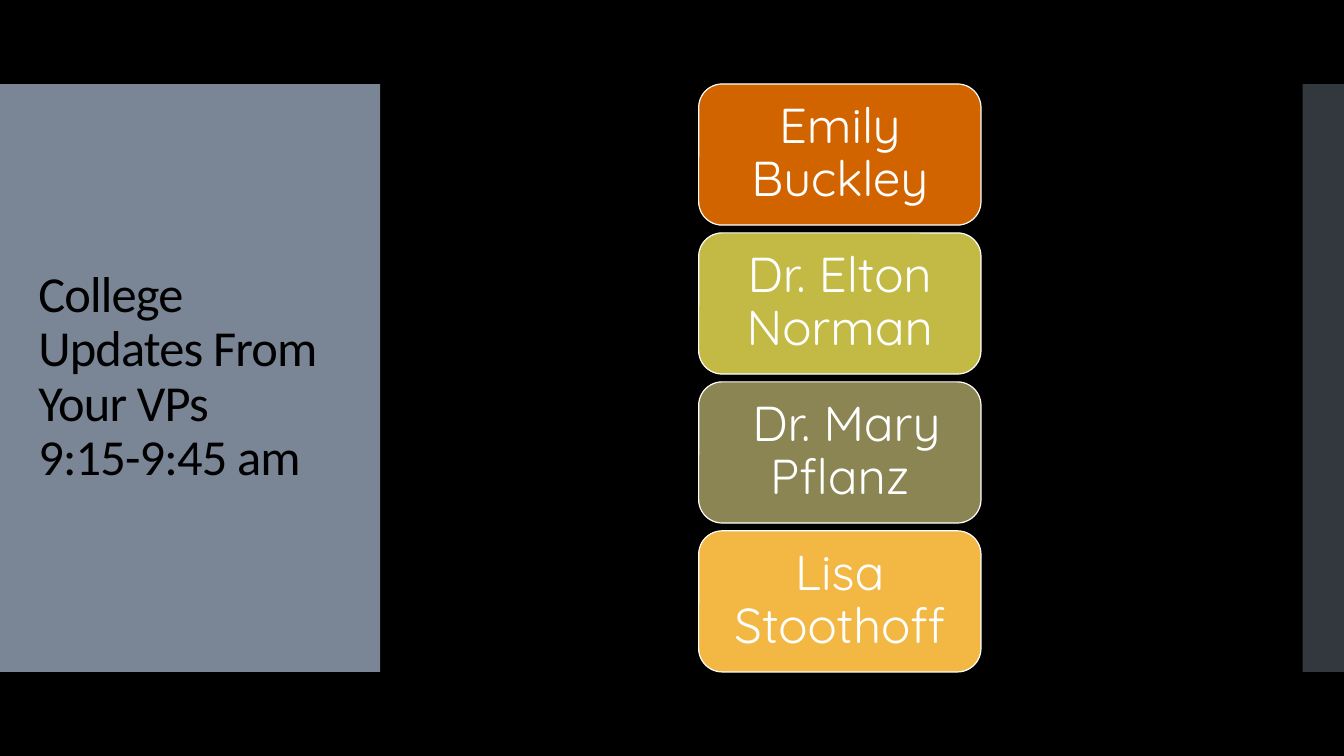
"""Builds a slide announcing the college updates from the vice presidents."""
from lxml import etree
from pptx import Presentation
from pptx import util as u
from pptx.dml.color import RGBColor
from pptx.enum import shapes, text
from pptx.oxml.ns import qn

COLORS = {"back": "000000", "panel": "818E9F", "ink": "000000", "white": "FFFFFF",
          "orange": "D26400", "lime": "C3BA45", "olive": "8A8552", "gold": "F3B843"}
TITLE = "College Updates From Your VPs\v9:15-9:45 am"
SPEAKERS = [("Emily Buckley", "orange"), ("Dr. Elton Norman", "lime"),
            (" Dr. Mary Pflanz", "olive"), ("Lisa Stoothoff", "gold")]

WIDTH, HEIGHT = 13.33, 7.5
BAND_TOP, BAND_HEIGHT = HEIGHT / 9, HEIGHT * 7 / 9
PANELS = [(0, 3.77, 95), (12.92, WIDTH - 12.92, 40)]
TITLE_AREA = (0.28, 1.23, 3.22, 5.03)
CARD_LEFT, CARD_WIDTH, CARD_HEIGHT = 6.93, 2.8, 1.4
CARD_STEP = (BAND_HEIGHT - CARD_HEIGHT) / (len(SPEAKERS) - 1)

TITLE_FORMAT = {"name": "Calibri", "size": u.Pt(36)}
CARD_FORMAT = {"name": "Quicksand", "size": u.Pt(35)}
TITLE_FRAME = {"vertical_anchor": text.MSO_ANCHOR.MIDDLE, "word_wrap": True,
               "auto_size": text.MSO_AUTO_SIZE.NONE}
CARD_FRAME = TITLE_FRAME | {"margin_left": u.Inches(0.21), "margin_right": u.Inches(0.21),
                            "margin_top": u.Inches(0.14), "margin_bottom": u.Inches(0.14)}


def color(name):
    return RGBColor.from_string(COLORS[name])


def set_all(target, values):
    for name, value in values.items():
        setattr(target, name, value)


def add_box(page, kind, area, fill):
    box = page.shapes.add_shape(kind, *map(u.Inches, area))
    box.shadow.inherit = False
    box.fill.solid()
    box.fill.fore_color.rgb = color(fill)
    return box


def write(box, words, frame_format, font_format, ink, align):
    frame = box.text_frame
    set_all(frame, frame_format)
    frame.text = words
    para = frame.paragraphs[0]
    set_all(para, {"alignment": align, "line_spacing": 0.9})
    for span in para.runs:
        set_all(span.font, font_format)
        span.font.color.rgb = color(ink)
    return para


def add_panel(page, left, width, opacity):
    panel = add_box(page, shapes.MSO_SHAPE.RECTANGLE,
                    (left, BAND_TOP, width, BAND_HEIGHT), "panel")
    panel.line.fill.background()
    tint = panel.fill._xPr.find(qn("a:solidFill"))[0]
    etree.SubElement(tint, qn("a:alpha"), val=str(opacity * 1000))


def add_title(page):
    title = page.shapes.title
    set_all(title, dict(zip(("left", "top", "width", "height"), map(u.Inches, TITLE_AREA))))
    para = write(title, TITLE, TITLE_FRAME, TITLE_FORMAT, "ink", text.PP_ALIGN.LEFT)
    for span in para.runs:
        span.font._element.set("spc", "-60")
    page.shapes._spTree.append(title._element)


def add_card(page, row, name, fill):
    area = (CARD_LEFT, BAND_TOP + row * CARD_STEP, CARD_WIDTH, CARD_HEIGHT)
    card = add_box(page, shapes.MSO_SHAPE.ROUNDED_RECTANGLE, area, fill)
    card.line.color.rgb = color("white")
    card.line.width = u.Pt(0.85)
    write(card, name, CARD_FRAME, CARD_FORMAT, "white", text.PP_ALIGN.CENTER)


def main():
    deck = Presentation()
    deck.slide_width, deck.slide_height = u.Inches(WIDTH), u.Inches(HEIGHT)
    page = deck.slides.add_slide(deck.slide_layouts[5])
    page.background.fill.solid()
    page.background.fill.fore_color.rgb = color("back")
    for panel in PANELS:
        add_panel(page, *panel)
    add_title(page)
    for row, (name, fill) in enumerate(SPEAKERS):
        add_card(page, row, name, fill)
    deck.save("out.pptx")


if __name__ == "__main__":
    main()
